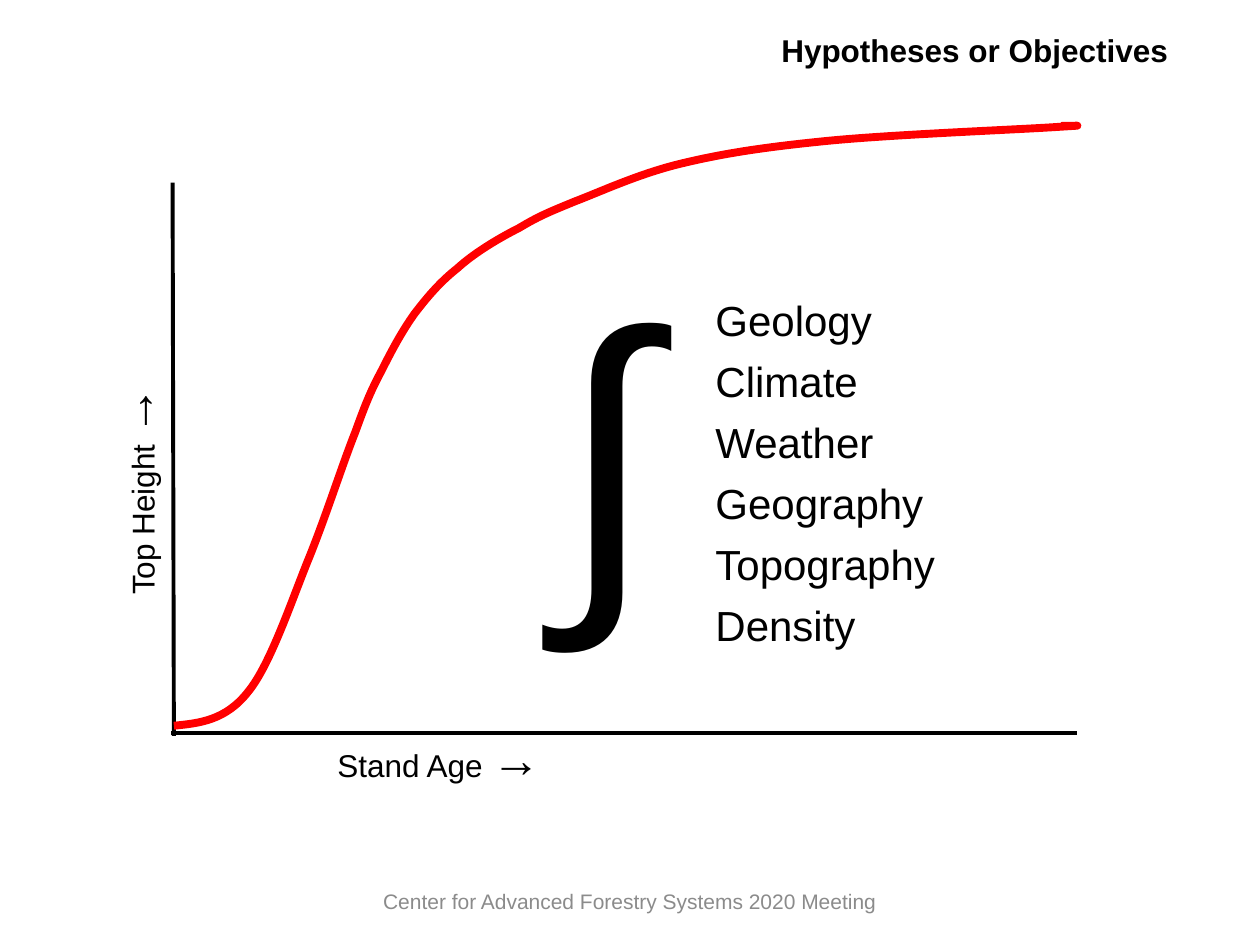
from dataclasses import dataclass

from lxml.etree import SubElement
from pptx import Presentation
from pptx.dml.color import RGBColor as Rgb
from pptx.enum.shapes import MSO_CONNECTOR as Conn
from pptx.enum.text import MSO_ANCHOR as Anchor, MSO_AUTO_SIZE as Fit, PP_ALIGN as Align
from pptx.oxml.ns import qn
from pptx.util import Inches, Pt

HUES = {"ink": "000000", "curve": "FF0000", "foot": "8B8B8B"}


@dataclass
class Label:
    box: tuple[float, float, float, float]
    lines: list[list[tuple[str, float]]]
    hue: str = "ink"
    bold: bool = False
    align: Align = Align.LEFT
    anchor: Anchor = Anchor.TOP
    wrap: bool = True
    grow: bool = False
    after: float = 0
    turn: float = 0


@dataclass
class Axis:
    start: tuple[float, float]
    end: tuple[float, float]


def add_label(shapes, label: Label) -> None:
    box = shapes.add_textbox(*map(Inches, label.box))
    box.rotation = label.turn
    frame = box.text_frame
    frame.word_wrap = label.wrap
    frame.auto_size = Fit.SHAPE_TO_FIT_TEXT if label.grow else Fit.NONE
    frame.vertical_anchor = label.anchor
    for row, line in enumerate(label.lines):
        para = frame.add_paragraph() if row else frame.paragraphs[0]
        para.alignment = label.align
        para.space_after = Pt(label.after)
        for text, size in line:
            run = para.add_run()
            run.text = text
            run.font.name = "Arial"
            run.font.size = Pt(size)
            run.font.bold = label.bold
            run.font.color.rgb = Rgb.from_string(HUES[label.hue])


def set_line(shape, hue: str, width: float) -> None:
    shape.line.color.rgb = Rgb.from_string(HUES[hue])
    shape.line.width = Pt(width)


def add_axis(shapes, axis: Axis) -> None:
    line = shapes.add_connector(Conn.STRAIGHT, *map(Inches, axis.start + axis.end))
    set_line(line, "ink", 2.25)
    SubElement(line._element.spPr, qn("a:effectLst"))


def add_curve(shapes, knots: list[tuple[float, float]], size: tuple[float, float]) -> None:
    points = [(Inches(x), Inches(y)) for x, y in knots]
    build = shapes.build_freeform(*points[0])
    build.add_line_segments(points[1:], close=False)
    curve = build.convert_to_shape()
    curve.width, curve.height = map(Inches, size)
    props = curve._element.spPr
    trace = next(props.iter(qn("a:path")))
    trace.set("w", str(curve.width))
    trace.set("h", str(curve.height))
    lines = trace.findall(qn("a:lnTo"))
    for i in range(0, len(lines), 3):
        bend = SubElement(trace, qn("a:cubicBezTo"))
        for line in lines[i:i + 3]:
            bend.append(line[0])
            trace.remove(line)
    curve.shadow.inherit = False
    curve.fill.background()
    set_line(curve, "curve", 4.5)
    SubElement(props.find(qn("a:ln")), qn("a:round"))


AXES = [Axis((1.36, 5.82), (8.55, 5.82)), Axis((1.37, 1.45), (1.38, 5.84))]

GROWTH = [
    (1.38, 5.76), (1.58, 5.74), (1.79, 5.72),
    (1.97, 5.49), (2.15, 5.27), (2.32, 4.75),
    (2.46, 4.41), (2.6, 4.06), (2.72, 3.68),
    (2.82, 3.43), (2.91, 3.18), (2.95, 3.09),
    (3.03, 2.94), (3.11, 2.78), (3.19, 2.63),
    (3.29, 2.49), (3.39, 2.36), (3.49, 2.24),
    (3.63, 2.13), (3.76, 2.01), (3.96, 1.89),
    (4.12, 1.81), (4.27, 1.72), (4.34, 1.69),
    (4.56, 1.6), (4.77, 1.52), (5.07, 1.38),
    (5.4, 1.3), (5.73, 1.22), (6.05, 1.17),
    (6.55, 1.12), (7.04, 1.07), (8.05, 1.03),
    (8.36, 1.01), (8.67, 0.99), (8.54, 1), (8.42, 1),
]

FACTORS = ["Geology", "Climate", "Weather", "Geography", "Topography", "Density"]

HEADS = [
    Label((2.75, 6.95, 4.5, 0.4),
          [[("Center for Advanced Forestry Systems 2020 Meeting", 12)]],
          hue="foot", align=Align.CENTER, anchor=Anchor.MIDDLE),
    Label((6.33, 0.2, 3.04, 0.4), [[("Hypotheses or Objectives", 18)]],
          bold=True, align=Align.RIGHT, wrap=False),
]

DRIVERS = [
    Label((5.58, 2.29, 2.06, 2.95), [[(name, 24)] for name in FACTORS],
          grow=True, after=6),
    Label((4.34, 1.79, 1.24, 3.45), [[("∫", 199)]], grow=True),
]

TITLES = [
    Label((2.58, 5.73, 3.13, 0.57), [[("Stand Age ", 18), ("→", 28)]], grow=True),
    Label((-0.49, 2.97, 3.13, 0.57), [[("Top Height ", 18), ("→", 28)]],
          grow=True, turn=270),
]


def main() -> None:
    deck = Presentation()
    deck.slide_width, deck.slide_height = Inches(10), Inches(7.5)
    shapes = deck.slides.add_slide(deck.slide_layouts[6]).shapes
    for label in HEADS:
        add_label(shapes, label)
    for axis in AXES:
        add_axis(shapes, axis)
    group = shapes.add_group_shape()
    for label in DRIVERS:
        add_label(group.shapes, label)
    for label in TITLES:
        add_label(shapes, label)
    add_curve(shapes, GROWTH, (7.18, 4.77))
    deck.save("out.pptx")


if __name__ == "__main__":
    main()
